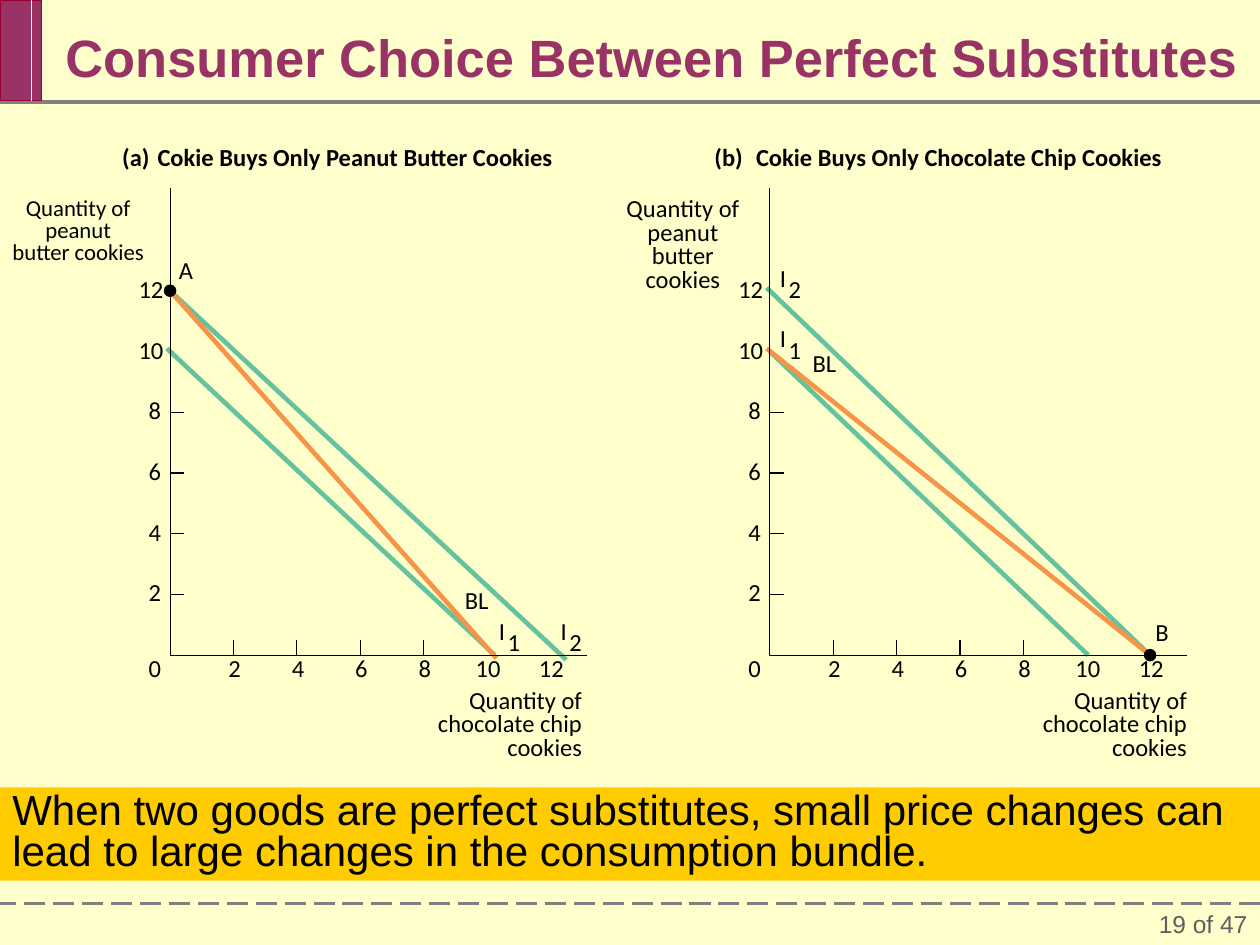
from dataclasses import dataclass

from lxml.etree import SubElement
from pptx import Presentation
from pptx.dml.color import RGBColor
from pptx.enum.dml import MSO_LINE
from pptx.enum.shapes import MSO_CONNECTOR, MSO_SHAPE
from pptx.enum.text import MSO_ANCHOR, MSO_AUTO_SIZE, PP_ALIGN
from pptx.oxml.ns import qn
from pptx.util import Inches, Pt


@dataclass(frozen=True)
class Theme:
    background: str = "FFFFCC"
    plum: str = "993366"
    plum_edge: str = "990033"
    rule: str = "808080"
    page: str = "5F5F5F"
    ink: str = "000000"
    indifference: str = "64C29C"
    budget: str = "F79448"
    banner: str = "FFCC00"
    heading_font: str = "Arial"
    chart_font: str = "Calibri"
    title_size: int = 30
    banner_size: int = 24
    label_size: int = 14
    small_label_size: int = 13
    axis_width: float = 0.63
    curve_width: float = 2.63


THEME = Theme()
WIDTH, HEIGHT = 10, 7.5
LABEL_HEIGHT = 0.19
DIGIT_WIDTH = 0.1


@dataclass(frozen=True)
class Panel:
    """One graph; curves and labels are in cookies, counted from the origin."""
    letter: str
    heading: str
    letter_left: float
    heading_left: float
    heading_width: float
    origin_x: float
    curves: tuple       # (colour, start, end)
    choice: tuple       # chosen bundle
    labels: tuple       # (text, left, top), offsets from the origin in inches
    indices: tuple      # (number, left, top) of the indifference curves
    y_title: str
    y_title_size: int
    y_title_height: float
    x_title_right: float

    origin_y = 5.2
    column = 0.2515
    row = 0.241

    def point(self, across, up):
        return self.origin_x + across * self.column, self.origin_y - up * self.row


PANELS = (
    Panel("(a)", "Cokie Buys Only Peanut Butter Cookies", 0.97, 1.25, 3.38, 1.35,
          ((THEME.indifference, (-0.1, 10.1), (10.25, 0)),
           (THEME.indifference, (0, 12), (12.5, -0.15)),
           (THEME.budget, (0, 12), (10.3, -0.1))),
          (0, 12),
          (("A", 0.07, -3.13), ("BL", 2.34, -0.51)),
          (("1", 2.61, -0.27), ("2", 3.1, -0.27)),
          "Quantity of peanut\vbutter cookies", THEME.small_label_size, 0.69, 4.62),
    Panel("(b)", "Cokie Buys Only Chocolate Chip Cookies", 5.67, 6, 3.48, 6.11,
          ((THEME.indifference, (0, 10), (10.05, 0)),
           (THEME.indifference, (-0.1, 12.1), (12, 0)),
           (THEME.budget, (-0.1, 10.1), (12, 0))),
          (12, 0),
          (("B", 3.06, -0.26), ("BL", 0.34, -2.39)),
          (("1", 0.08, -2.59), ("2", 0.08, -3.07)),
          "Quantity of peanut butter cookies", THEME.label_size, 0.74, 9.42),
)


def rgb(colour):
    return RGBColor.from_string(colour)


def write(frame, text, size, font, colour=THEME.ink, bold=False,
          align=PP_ALIGN.LEFT, spacing=0.8):
    paragraph = frame.paragraphs[0]
    paragraph.text = text
    paragraph.alignment = align
    paragraph.line_spacing = spacing
    paragraph.font.size = Pt(size)
    paragraph.font.name = font
    paragraph.font.bold = bold
    paragraph.font.color.rgb = rgb(colour)


def add_text(slide, box, text, size, font, wrap=True, **style):
    frame = slide.shapes.add_textbox(*map(Inches, box)).text_frame
    frame.word_wrap = wrap
    frame.auto_size = MSO_AUTO_SIZE.SHAPE_TO_FIT_TEXT
    write(frame, text, size, font, **style)
    return frame


def add_label(slide, box, text, size=THEME.label_size, **style):
    """Chart text in a box without margins."""
    frame = add_text(slide, box, text, size, THEME.chart_font, **style)
    frame.margin_left = frame.margin_right = frame.margin_top = frame.margin_bottom = 0


def add_mark(slide, left, top, text, width=None, **style):
    """One unwrapped line of chart text."""
    add_label(slide, (left, top, width or DIGIT_WIDTH * len(text), LABEL_HEIGHT),
              text, wrap=False, **style)


def add_line(slide, start, end, colour, width, dash=None):
    line = slide.shapes.add_connector(MSO_CONNECTOR.STRAIGHT, *map(Inches, (*start, *end)))
    line.line.color.rgb = rgb(colour)
    line.line.width = Pt(width)
    if dash:
        line.line.dash_style = dash
    SubElement(line._element.spPr, qn("a:effectLst"))


def add_solid(slide, kind, box, fill, edge=None):
    solid = slide.shapes.add_shape(kind, *map(Inches, box))
    solid.shadow.inherit = False
    solid.fill.solid()
    solid.fill.fore_color.rgb = rgb(fill)
    if edge:
        solid.line.color.rgb = rgb(edge)
        solid.line.width = Pt(0.75)
    else:
        solid.line.fill.background()
    return solid


def add_axes(slide, panel):
    x, y = panel.origin_x, panel.origin_y
    corners = [(Inches(a), Inches(b)) for a, b in ((x + 3.31, y), (x, y), (x, y - 3.71))]
    builder = slide.shapes.build_freeform(*corners[0])
    builder.add_line_segments(corners[1:], close=False)
    axes = builder.convert_to_shape()
    axes.shadow.inherit = False
    axes.fill.background()
    axes.line.color.rgb = rgb(THEME.ink)
    axes.line.width = Pt(THEME.axis_width)


def add_scale(slide, panel):
    """Tick marks up to 8 and numbers up to 12 on both axes."""
    x, y = panel.origin_x, panel.origin_y
    add_mark(slide, x - 0.17, y + 0.03, "0")
    for value in range(2, 13, 2):
        tick_x, tick_y = panel.point(value, value)
        number = str(value)
        half = DIGIT_WIDTH * len(number) / 2
        add_mark(slide, tick_x + 0.01 - half, y + 0.03, number)
        add_mark(slide, x - 0.09 - 0.03 * len(number) - half, tick_y - 0.09, number)
        if value <= 8:
            add_line(slide, (tick_x, y - 0.12), (tick_x, y), THEME.ink, THEME.axis_width)
            add_line(slide, (x, tick_y), (x + 0.11, tick_y), THEME.ink, THEME.axis_width)


def add_panel(slide, panel):
    x, y = panel.origin_x, panel.origin_y
    add_mark(slide, panel.letter_left, 1.17, panel.letter, 0.23, bold=True)
    add_mark(slide, panel.heading_left, 1.17, panel.heading, panel.heading_width, bold=True)
    add_scale(slide, panel)
    for text, left, top in panel.labels:
        add_mark(slide, x + left, y + top, text)
    for number, left, top in panel.indices:
        add_mark(slide, x + left, y + top, "I", 0.05)
        add_mark(slide, x + left + 0.07, y + top + 0.09, number)
    for colour, start, end in panel.curves:
        add_line(slide, panel.point(*start), panel.point(*end), colour, THEME.curve_width)
    add_axes(slide, panel)
    dot_x, dot_y = panel.point(*panel.choice)
    add_solid(slide, MSO_SHAPE.OVAL, (dot_x - 0.05, dot_y - 0.05, 0.1, 0.1), THEME.ink)
    add_label(slide, (panel.x_title_right - 1.5, 5.48, 1.5, 0.56),
              "Quantity of chocolate chip cookies", align=PP_ALIGN.RIGHT)
    add_label(slide, (panel.x_title_right - 4.54, 1.58, 1.08, panel.y_title_height),
              panel.y_title, panel.y_title_size, align=PP_ALIGN.CENTER)


def add_frame(slide):
    """Page number, rules and the corner block."""
    page = add_text(slide, (8.5, 7.17, 1.5, 0.33), "19 of 47", THEME.label_size,
                    THEME.heading_font, colour=THEME.page, align=PP_ALIGN.RIGHT, spacing=1.0)
    page.auto_size = MSO_AUTO_SIZE.NONE
    page.vertical_anchor = MSO_ANCHOR.MIDDLE
    add_line(slide, (WIDTH, 7.17), (0, 7.17), THEME.rule, 1.5, MSO_LINE.LONG_DASH)
    add_line(slide, (WIDTH, 0.81), (0, 0.81), THEME.rule, 2)
    add_solid(slide, MSO_SHAPE.RECTANGLE, (0, 0, 0.33, 0.8), THEME.plum, THEME.plum_edge)
    add_line(slide, (0.25, 0), (0.25, 0.8), THEME.background, 0.75)


def add_banner(slide, text):
    banner = add_solid(slide, MSO_SHAPE.RECTANGLE, (0, 6.25, WIDTH, 0.74), THEME.banner)
    frame = banner.text_frame
    frame.word_wrap = True
    frame.auto_size = MSO_AUTO_SIZE.SHAPE_TO_FIT_TEXT
    frame.vertical_anchor = MSO_ANCHOR.TOP
    write(frame, text, THEME.banner_size, THEME.heading_font)


def main():
    deck = Presentation()
    deck.slide_width, deck.slide_height = Inches(WIDTH), Inches(HEIGHT)
    slide = deck.slides.add_slide(deck.slide_layouts[6])
    slide.background.fill.solid()
    slide.background.fill.fore_color.rgb = rgb(THEME.background)
    add_frame(slide)
    for panel in PANELS:
        add_panel(slide, panel)
    add_text(slide, (0.42, 0.25, 9.58, 0.5), "Consumer Choice Between Perfect Substitutes",
             THEME.title_size, THEME.heading_font, colour=THEME.plum, bold=True)
    add_banner(slide, "When two goods are perfect substitutes, small price changes can "
                      "lead to large changes in the consumption bundle.")
    deck.save("out.pptx")


if __name__ == "__main__":
    main()
